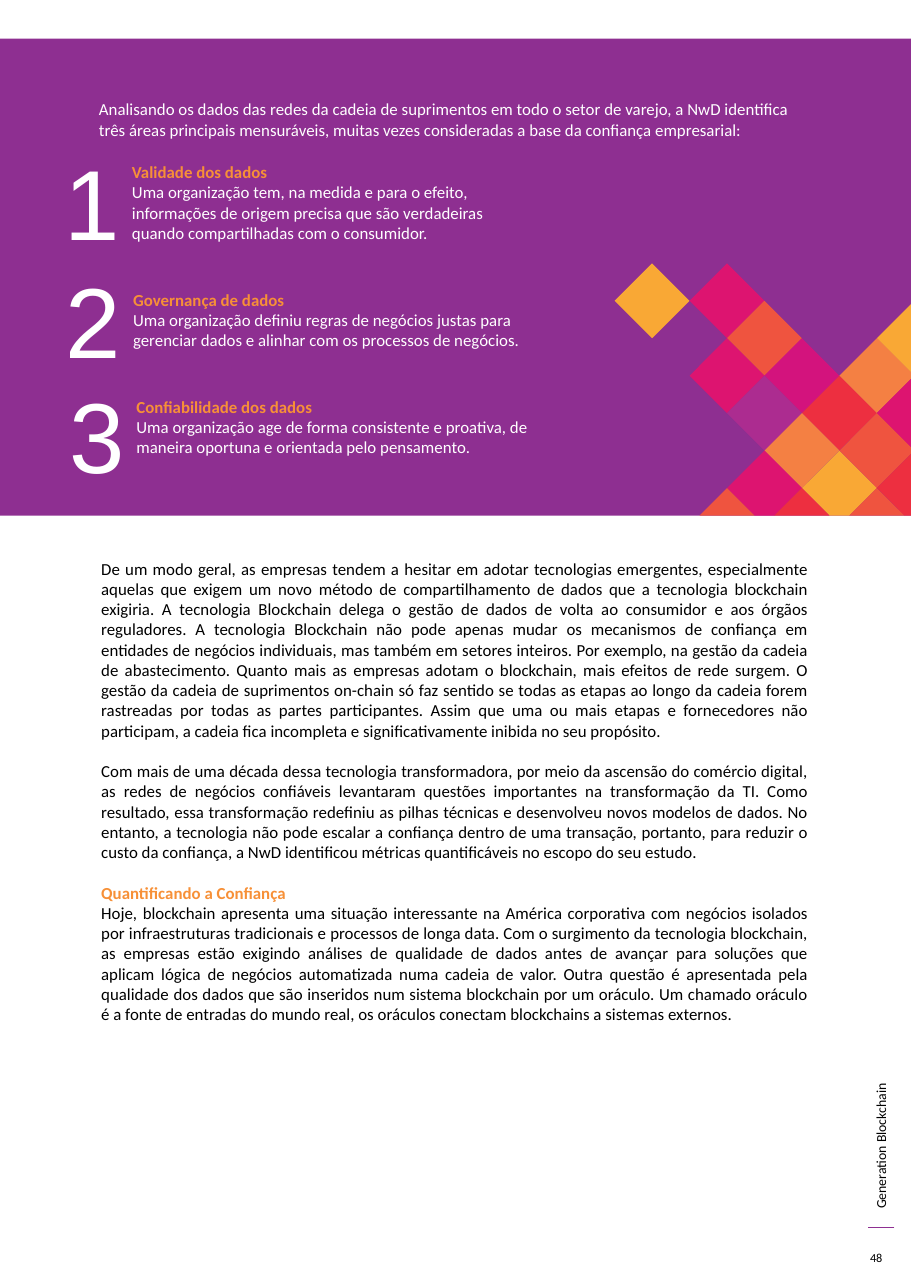
from pptx import Presentation
from pptx.dml.color import RGBColor as RGB
from pptx.enum.shapes import MSO_CONNECTOR as Conn, MSO_SHAPE as Kind
from pptx.enum.text import MSO_ANCHOR as Anchor, PP_ALIGN as Align
from pptx.oxml.ns import qn
from pptx.util import Inches, Pt
from lxml.etree import SubElement as Sub

WHITE = RGB(0xFF, 0xFF, 0xFF)
BLACK = RGB(0, 0, 0)
PURPLE = RGB(0x8E, 0x2F, 0x91)
AMBER = RGB(0xF7, 0x90, 0x37)
GOLD = RGB(0xF9, 0xA8, 0x35)
PEACH = RGB(0xF4, 0x80, 0x43)
CORAL = RGB(0xEF, 0x54, 0x3F)
RED = RGB(0xED, 0x2F, 0x40)
PINK = RGB(0xDD, 0x14, 0x70)
ROSE = RGB(0xD3, 0x13, 0x7D)
PLUM = RGB(0xAC, 0x2C, 0x90)

COLS, ROWS = 82.7, 116.9
FLOOR = 46.8
STEP = 3.4
LEFT, TOP = 55.8, 23.9

TEXT = {"size": Pt(11), "name": "Calibri", "bold": False}
HEAD = TEXT | {"bold": True}
DIGIT = {"size": Pt(65), "name": "Arial"}
SIDE = TEXT | {"size": Pt(9)}
FOLIO = TEXT | {"size": Pt(8)}
BODY = {"alignment": Align.JUSTIFY}
GAP = BODY | {"space_before": Pt(13.4)}

INTRO = "Analisando os dados das redes da cadeia de suprimentos em todo o setor de varejo, a NwD identifica três áreas principais mensuráveis, muitas vezes consideradas a base da confiança empresarial:"
AREAS = [
    (4.9, 12.3, 14.2, "Validade dos dados", "Uma organização tem, na medida e para o efeito, informações de origem precisa que são verdadeiras quando compartilhadas com o consumidor."),
    (5, 23, 25.8, "Governança de dados", "Uma organização definiu regras de negócios justas para gerenciar dados e alinhar com os processos de negócios."),
    (5.3, 33.5, 35.5, "Confiabilidade dos dados", "Uma organização age de forma consistente e proativa, de maneira oportuna e orientada pelo pensamento."),
]
DOUBTS = " ".join([
    "De um modo geral, as empresas tendem a hesitar em adotar tecnologias emergentes, especialmente aquelas que exigem um novo método de compartilhamento de dados que a tecnologia blockchain exigiria. A tecnologia Blockchain delega o gestão de dados de volta ao consumidor e aos órgãos reguladores.",
    "A tecnologia Blockchain não pode apenas mudar os mecanismos de confiança em entidades de negócios individuais, mas também em setores inteiros. Por exemplo, na gestão da cadeia de abastecimento. Quanto mais as empresas adotam o blockchain, mais efeitos de rede surgem.",
    "O gestão da cadeia de suprimentos on-chain só faz sentido se todas as etapas ao longo da cadeia forem rastreadas por todas as partes participantes. Assim que uma ou mais etapas e fornecedores não participam, a cadeia fica incompleta e significativamente inibida no seu propósito.",
])
STORY = [
    (DOUBTS, TEXT, BLACK, BODY),
    ("Com mais de uma década dessa tecnologia transformadora, por meio da ascensão do comércio digital, as redes de negócios confiáveis levantaram questões importantes na transformação da TI. Como resultado, essa transformação redefiniu as pilhas técnicas e desenvolveu novos modelos de dados. No entanto, a tecnologia não pode escalar a confiança dentro de uma transação, portanto, para reduzir o custo da confiança, a NwD identificou métricas quantificáveis no escopo do seu estudo.", TEXT, BLACK, GAP),
    ("Quantificando a Confiança", HEAD, AMBER, GAP),
    ("Hoje, blockchain apresenta uma situação interessante na América corporativa com negócios isolados por infraestruturas tradicionais e processos de longa data. Com o surgimento da tecnologia blockchain, as empresas estão exigindo análises de qualidade de dados antes de avançar para soluções que aplicam lógica de negócios automatizada numa cadeia de valor. Outra questão é apresentada pela qualidade dos dados que são inseridos num sistema blockchain por um oráculo. Um chamado oráculo é a fonte de entradas do mundo real, os oráculos conectam blockchains a sistemas externos.", TEXT, BLACK, BODY),
]
TILES = [
    (1, 1, GOLD), (3, 1, PINK), (4, 2, CORAL), (8, 2, GOLD), (3, 3, PINK), (5, 3, ROSE),
    (7, 3, PEACH), (4, 4, PLUM), (6, 4, RED), (8, 4, PINK), (5, 5, PEACH), (7, 5, CORAL),
    (4, 6, PINK), (6, 6, GOLD), (8, 6, RED), (3, 7, CORAL), (5, 7, RED), (7, 7, CORAL),
]


def put(item, form):
    """Set each format value on the item."""
    for key, val in form.items():
        setattr(item, key, val)


def clip(dots, axis, edge):
    """Cut a polygon where one axis passes the edge."""
    kept = []
    for a, b in zip(dots, dots[1:] + dots[:1]):
        if a[axis] <= edge:
            kept.append(a)
        if (a[axis] - edge) * (b[axis] - edge) < 0:
            part = (edge - a[axis]) / (b[axis] - a[axis])
            kept.append(tuple(p + part * (q - p) for p, q in zip(a, b)))
    return kept


class Page:
    """Draws elements on one slide, in columns and rows of a tenth of an inch."""

    def __init__(self, deck):
        """Add a blank slide."""
        self.slide = deck.slides.add_slide(deck.slide_layouts[6])
        self.shapes = self.slide.shapes

    def span(self, *cells):
        """Turn grid cells into lengths."""
        return [Inches(cell / 10) for cell in cells]

    def paint(self, shape, fill):
        """Give a shape a plain fill."""
        shape.shadow.inherit = False
        shape.fill.solid()
        shape.fill.fore_color.rgb = fill
        shape.line.fill.background()

    def band(self, cells, fill):
        """Draw a filled rectangle."""
        self.paint(self.shapes.add_shape(Kind.RECTANGLE, *self.span(*cells)), fill)

    def tile(self, col, row, fill):
        """Draw a diamond cut at the right and lower edges."""
        x, y = LEFT + col * STEP, TOP + row * STEP
        dots = [(x, y - STEP), (x + STEP, y), (x, y + STEP), (x - STEP, y)]
        dots = [self.span(*dot) for dot in clip(clip(dots, 0, COLS), 1, FLOOR)]
        pen = self.shapes.build_freeform(*dots[0])
        pen.add_line_segments(dots[1:])
        self.paint(pen.convert_to_shape(), fill)

    def rule(self, ends, ink):
        """Draw a thin straight line."""
        line = self.shapes.add_connector(Conn.STRAIGHT, *self.span(*ends))
        line.line.color.rgb = ink
        line.line.width = Pt(0.75)
        Sub(line._element.spPr, qn("a:effectLst"))

    def text(self, cells, paras, turn=0, **frame):
        """Write paragraphs of words, font, ink and layout."""
        box = self.shapes.add_textbox(*self.span(*cells))
        box.rotation = turn
        put(box.text_frame, {"word_wrap": True} | frame)
        for num, (words, font, ink, form) in enumerate(paras):
            para = box.text_frame.add_paragraph() if num else box.text_frame.paragraphs[0]
            put(para, form)
            run = para.add_run()
            run.text = words
            put(run.font, font)
            run.font.color.rgb = ink


def main():
    """Build the page and save it."""
    deck = Presentation()
    put(deck, {"slide_width": Inches(COLS / 10), "slide_height": Inches(ROWS / 10)})
    page = Page(deck)
    page.text((62.6, 92.1, 34.7, 2.5), [("Generation Blockchain", SIDE, BLACK, {})], turn=270)
    page.rule((81.2, 111.4, 78.8, 111.4), PURPLE)
    page.band((0, 3.5, COLS, 46.8), PURPLE)
    page.text((8, 8.5, 66.2, 3.1), [(INTRO, TEXT, WHITE, {"space_after": Pt(12)})])
    page.text((78, 111.6, 4.1, 5.1), [("48", FOLIO, BLACK, {})], vertical_anchor=Anchor.MIDDLE)
    page.band((0, FLOOR, COLS, 8.5), WHITE)
    for tile in TILES:
        page.tile(*tile)
    for num, (col, high, low, head, words) in enumerate(AREAS, 1):
        page.text((col, high, 7.2, 11.9), [(str(num), DIGIT, WHITE, {})])
        page.text((col + 6.1, low, 38.3, 6.9), [(head, HEAD, AMBER, {}), (words, TEXT, WHITE, {})])
    page.text((8.2, 50.2, 66.2, 58.3), STORY)
    deck.save("out.pptx")


if __name__ == "__main__":
    main()
